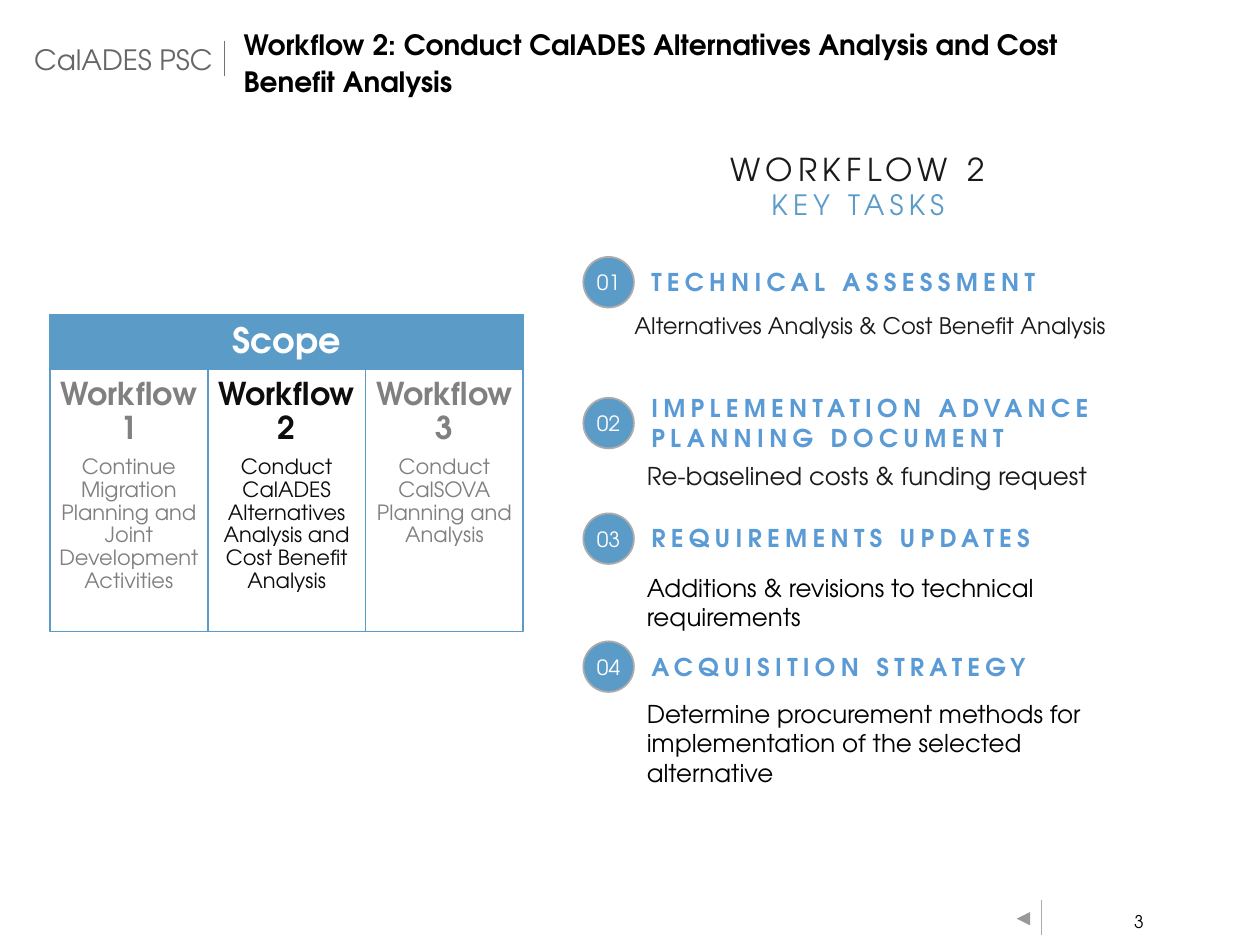
"""Build the Workflow 2 key tasks slide."""
import lxml.etree
import pptx
import pptx.dml.color
import pptx.enum.shapes
import pptx.enum.text
import pptx.oxml.ns
import pptx.util

Cm = pptx.util.Cm
Pt = pptx.util.Pt
SHAPE = pptx.enum.shapes.MSO_SHAPE
ALIGN = pptx.enum.text.PP_ALIGN
ANCHOR = pptx.enum.text.MSO_ANCHOR
FIT = pptx.enum.text.MSO_AUTO_SIZE
FONT = "TeX Gyre Adventor"
BLUE, GREY, INK = "5B9BC8", "AFABAB", "1A1A1A"

SCOPE = [
    ("Workflow 1", "Continue Migration Planning and Joint Development Activities", "808080"),
    ("Workflow 2", "Conduct CalADES Alternatives Analysis and Cost Benefit Analysis", "0D0D0D"),
    ("Workflow 3", "Conduct CalSOVA Planning and Analysis", "808080"),
]
TASKS = [
    (5.18, 5.26, 10.36, 0.86, "TECHNICAL ASSESSMENT"),
    (8.02, 7.8, 10.72, 1.45, "IMPLEMENTATION ADVANCE PLANNING DOCUMENT"),
    (10.35, 10.41, 10.36, 0.86, "REQUIREMENTS UPDATES"),
    (12.93, 13.02, 10.36, 0.86, "ACQUISITION STRATEGY"),
]
DETAILS = [
    (9.17, 1.14, INK, "Re-baselined costs & funding request"),
    (11.42, 1.02, "000000", "Additions & revisions to technical requirements"),
    (13.96, 1.45, "000000",
     "Determine procurement methods for implementation of the selected alternative"),
]


def rgb(value):
    """Return the colour for a hex string."""
    return pptx.dml.color.RGBColor.from_string(value)


def style(paragraph, size, color, bold=False, align=ALIGN.LEFT, tracking=0):
    """Format a paragraph and its runs."""
    paragraph.alignment = align
    for run in paragraph.runs:
        run.font.name = FONT
        run.font.size = Pt(size)
        run.font.bold = bold
        run.font.color.rgb = rgb(color)
        if tracking:
            run._r.get_or_add_rPr().set("spc", str(tracking * 100))


def set_frame(frame, inset_x=0.25, inset_y=0.13, anchor=ANCHOR.TOP, fit=FIT.NONE, wrap=True):
    """Set insets, anchor, fitting and wrapping of a text frame."""
    frame.margin_left = frame.margin_right = Cm(inset_x)
    frame.margin_top = frame.margin_bottom = Cm(inset_y)
    frame.vertical_anchor = anchor
    frame.auto_size = fit
    frame.word_wrap = wrap


def place(part, left, top, width, height):
    """Move and size a part of the slide."""
    part.left, part.top, part.width, part.height = map(Cm, (left, top, width, height))


def add_label(slide, box, text, size, color, bold=False, align=ALIGN.LEFT, tracking=0, **frame):
    """Add a text box with a single paragraph."""
    label = slide.shapes.add_textbox(*map(Cm, box))
    set_frame(label.text_frame, **frame)
    label.text_frame.text = text
    style(label.text_frame.paragraphs[0], size, color, bold, align, tracking)
    return label


def add_block(slide, kind, box, fill, line=None, weight=1):
    """Add a flat filled shape."""
    block = slide.shapes.add_shape(kind, *map(Cm, box))
    block.shadow.inherit = False
    block.fill.solid()
    block.fill.fore_color.rgb = rgb(fill)
    if line:
        block.line.color.rgb = rgb(line)
        block.line.width = Pt(weight)
    else:
        block.line.fill.background()
    return block


def add_divider(slide, x, top, color):
    """Add a thin vertical rule."""
    rule = slide.shapes.add_connector(
        pptx.enum.shapes.MSO_CONNECTOR.STRAIGHT, Cm(x), Cm(top), Cm(x), Cm(top + 0.71))
    rule.line.color.rgb = rgb(color)
    rule.line.width = Pt(0.5)
    lxml.etree.SubElement(rule._element.spPr, pptx.oxml.ns.qn("a:effectLst"))


def set_second_level(paragraph, indent):
    """Make a second-level paragraph with a set indent and no bullet."""
    paragraph.level = 1
    properties = paragraph._p.get_or_add_pPr()
    properties.set("marL", str(Cm(indent)))
    properties.set("indent", "0")
    lxml.etree.SubElement(properties, pptx.oxml.ns.qn("a:buNone"))


def set_detail(paragraph):
    """Space and indent the detail of a task."""
    paragraph.space_before = Pt(6)
    set_second_level(paragraph, 0.81)


def add_header(slide):
    """Add the programme name, rule and slide title."""
    add_label(slide, (0.69, 0.72, 6.17, 0.94), "CalADES PSC", 16, "666666",
              inset_x=0, anchor=ANCHOR.MIDDLE, fit=FIT.SHAPE_TO_FIT_TEXT)
    add_divider(slide, 4.52, 0.82, "767171")
    title = slide.shapes.title
    place(title, 4.91, 0.76, 18.29, 0.94)
    set_frame(title.text_frame, inset_x=0, anchor=ANCHOR.MIDDLE)
    title.text_frame.text = (
        "Workflow 2: Conduct CalADES Alternatives Analysis and Cost Benefit Analysis")
    heading = title.text_frame.paragraphs[0]
    heading.line_spacing = 1.1
    style(heading, 16, "000000", True)


def add_scope(slide):
    """Add the scope band and its three workflow columns."""
    left, top, column = 1.01, 6.34, 3.18
    band = add_block(slide, SHAPE.RECTANGLE, (left, top, 3 * column, 1.11), BLUE, BLUE, 0.75)
    set_frame(band.text_frame, inset_y=0.25, anchor=ANCHOR.MIDDLE)
    band.text_frame.text = "Scope"
    band.text_frame.paragraphs[0].line_spacing = 0.9
    style(band.text_frame.paragraphs[0], 20, "FFFFFF", True, ALIGN.CENTER)
    for index, (workflow, summary, color) in enumerate(SCOPE):
        cell = add_block(slide, SHAPE.RECTANGLE,
                         (left + index * column, top + 1.11, column, 5.28), "FFFFFF", BLUE)
        set_frame(cell.text_frame, inset_x=0.17, inset_y=0.17)
        cell.text_frame.text = f"{workflow}\n{summary}"
        name, description = cell.text_frame.paragraphs
        name.line_spacing = description.line_spacing = 0.9
        name.space_after = Pt(6)
        set_second_level(description, 0)
        style(name, 18, color, True, ALIGN.CENTER)
        style(description, 12, color, align=ALIGN.CENTER)


def add_tasks(slide):
    """Add the key tasks heading, numbered tasks and their details."""
    banner = add_block(slide, SHAPE.RECTANGLE, (12.28, 2.89, 10.03, 1.7), "FFFFFF")
    set_frame(banner.text_frame, fit=FIT.SHAPE_TO_FIT_TEXT)
    banner.text_frame.text = "WORKFLOW 2\nKEY TASKS"
    workflow, key_tasks = banner.text_frame.paragraphs
    style(workflow, 18, INK, align=ALIGN.CENTER, tracking=3)
    style(key_tasks, 16, BLUE, align=ALIGN.CENTER, tracking=3)

    for number, (badge_top, top, width, height, task) in enumerate(TASKS, 1):
        badge = add_block(slide, SHAPE.OVAL, (11.76, badge_top, 1.02, 1.02), BLUE, GREY)
        set_frame(badge.text_frame, 0, 0, ANCHOR.MIDDLE)
        badge.text_frame.text = f"{number:02d}"
        style(badge.text_frame.paragraphs[0], 12, "FFFFFF", align=ALIGN.CENTER)
        add_label(slide, (12.88, top, width, height), task, 14, "5B9BD5", True,
                  tracking=3, fit=FIT.SHAPE_TO_FIT_TEXT)

    assessment = slide.placeholders[1]
    place(assessment, 11.98, 6.07, 11.3, 0.99)
    set_frame(assessment.text_frame, inset_x=0, anchor=ANCHOR.MIDDLE)
    assessment.text_frame.text = "Alternatives Analysis & Cost Benefit Analysis"
    style(assessment.text_frame.paragraphs[0], 13, INK)
    set_detail(assessment.text_frame.paragraphs[0])
    for top, height, color, text in DETAILS:
        detail = add_label(slide, (11.98, top, 11.23, height), text, 14, color)
        set_detail(detail.text_frame.paragraphs[0])


def add_footer(slide):
    """Add the back button, rule and page number."""
    back = add_block(slide, SHAPE.ACTION_BUTTON_FORWARD_OR_NEXT,
                     (20.45, 18.29, 0.36, 0.46), "FFFFFF")
    back.rotation = 180
    add_divider(slide, 20.99, 18.14, GREY)
    add_label(slide, (22.45, 18.26, 0.81, 0.61), "3", 10, "000000", align=ALIGN.RIGHT,
              inset_x=0.2, inset_y=0.1, fit=FIT.SHAPE_TO_FIT_TEXT, wrap=False)


def main():
    """Create and save the presentation."""
    deck = pptx.Presentation()
    deck.slide_width, deck.slide_height = Cm(25.4), Cm(19.05)
    slide = deck.slides.add_slide(deck.slide_layouts[1])
    add_header(slide)
    add_scope(slide)
    add_tasks(slide)
    add_footer(slide)
    deck.save("out.pptx")


if __name__ == "__main__":
    main()
